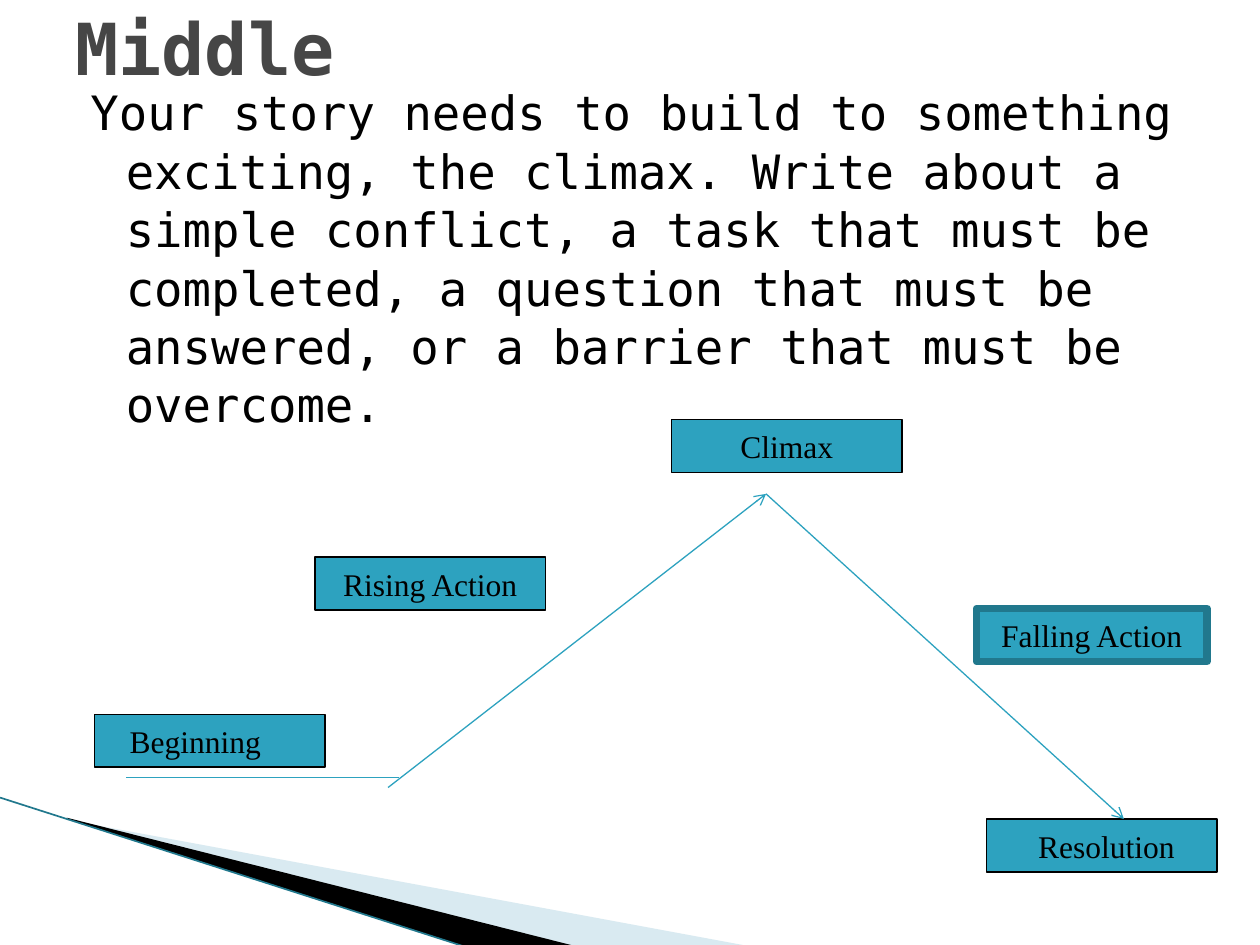
from lxml import etree
from pptx import Presentation
from pptx.dml.color import RGBColor
from pptx.enum import shapes, text
from pptx.oxml.ns import qn
from pptx.util import Inches, Pt

BLACK = RGBColor(0x00, 0x00, 0x00)
GRAY = RGBColor(0x46, 0x46, 0x46)
TEAL = RGBColor(0x2D, 0xA2, 0xBF)
DARK_TEAL = RGBColor(0x21, 0x78, 0x8D)
PALE_BLUE = RGBColor(0xA0, 0xCB, 0xDC)
MONO = "DejaVu Sans Mono"
SERIF = "Times New Roman"
LABEL_WIDTH, LABEL_HEIGHT = 1.83, 0.42


def add_run(paragraph, words, font_name, size, color, bold=False):
    run = paragraph.add_run()
    run.text = words
    run.font.name = font_name
    run.font.size = Pt(size)
    run.font.color.rgb = color
    run.font.bold = bold


def add_line(slide, start, end, color=TEAL, width=0.75, arrow=False):
    points = [Inches(value) for value in (*start, *end)]
    line = slide.shapes.add_connector(shapes.MSO_CONNECTOR.STRAIGHT, *points)
    line.line.color.rgb = color
    line.line.width = Pt(width)
    if arrow:
        etree.SubElement(line.line._get_or_add_ln(), qn("a:tailEnd"), type="arrow")
    etree.SubElement(line._element.spPr, qn("a:effectLst"))


def add_wedge(slide, points, color, opacity=None):
    corners = [(Inches(x), Inches(y)) for x, y in points]
    builder = slide.shapes.build_freeform(*corners[0])
    builder.add_line_segments(corners[1:], close=True)
    wedge = builder.convert_to_shape()
    wedge.shadow.inherit = False
    wedge.fill.solid()
    wedge.fill.fore_color.rgb = color
    wedge.line.fill.background()
    if opacity is not None:
        color_element = wedge._element.spPr.find(f".//{qn('a:srgbClr')}")
        etree.SubElement(color_element, qn("a:alpha"), val=str(opacity * 1000))


def add_corner_decoration(slide, left, top):
    """Draw the wedges that sweep from the left edge to the bottom edge."""
    def place(*points):
        return [(left + x, top + y) for x, y in points]

    add_wedge(slide, place((0.55, 0.18), (5.95, 1.18), (4.56, 1.18), (0.55, 0.17)),
              PALE_BLUE, opacity=40)
    add_wedge(slide, place((0.53, 0.16), (4.57, 1.18), (3.72, 1.19), (0.54, 0.17)), BLACK)
    add_line(slide, *place((0, 0), (3.71, 1.19)), color=DARK_TEAL, width=0.95)


def add_text_frame(slide, left, top, width, height):
    box = slide.shapes.add_textbox(*map(Inches, (left, top, width, height)))
    box.text_frame.word_wrap = True
    return box.text_frame


def add_title(slide, left, top, width, height):
    frame = add_text_frame(slide, left, top, width, height)
    frame.vertical_anchor = text.MSO_ANCHOR.MIDDLE
    add_run(frame.paragraphs[0], "Middle", MONO, 41, GRAY, bold=True)


def add_body(slide, left, top, width, height):
    frame = add_text_frame(slide, left, top, width, height)
    paragraph = frame.paragraphs[0]
    paragraph.line_spacing = 1.03
    properties = paragraph._p.get_or_add_pPr()
    properties.set("marL", str(Inches(0.4)))
    properties.set("indent", str(Inches(-0.28)))
    add_run(paragraph,
            "Your story needs to build to something exciting, the climax. "
            "Write about a simple conflict, a task that must be completed, "
            "a question that must be answered, or a barrier that must be overcome.",
            MONO, 27, BLACK)


def add_label(slide, words, left, top, text_inset=None, border=BLACK, border_width=1):
    """Add a label box; its text is centred unless a left text inset is given."""
    label = slide.shapes.add_shape(
        shapes.MSO_SHAPE.RECTANGLE,
        *map(Inches, (left, top, LABEL_WIDTH, LABEL_HEIGHT)))
    label.shadow.inherit = False
    label.fill.solid()
    label.fill.fore_color.rgb = TEAL
    label.line.color.rgb = border
    label.line.width = Pt(border_width)
    frame = label.text_frame
    frame.word_wrap = False
    frame.vertical_anchor = text.MSO_ANCHOR.MIDDLE
    paragraph = frame.paragraphs[0]
    if text_inset is None:
        paragraph.alignment = text.PP_ALIGN.CENTER
    else:
        paragraph.alignment = text.PP_ALIGN.LEFT
        frame.word_wrap = True
        frame.margin_left = Inches(text_inset)
    add_run(paragraph, words, SERIF, 18, BLACK)


def add_story_arc(slide, left, top):
    add_label(slide, "Beginning", left, top + 2.34, text_inset=0.28)
    add_label(slide, "Rising Action", left + 1.75, top + 1.09)
    add_label(slide, "Climax", left + 4.58, top)
    add_label(slide, "Falling Action", left + 7, top + 1.5,
              border=DARK_TEAL, border_width=4.33)
    add_label(slide, "Resolution", left + 7.08, top + 3.17, text_inset=0.41)

    peak = (left + 5.33, top + 0.59)
    add_line(slide, (left + 0.25, top + 2.84), (left + 2.42, top + 2.84))
    add_line(slide, (left + 2.33, top + 2.92), peak, arrow=True)
    add_line(slide, peak, (left + 8.17, top + 3.17), arrow=True)


def main():
    presentation = Presentation()
    presentation.slide_width = Inches(10)
    presentation.slide_height = Inches(7.5)
    slide = presentation.slides.add_slide(presentation.slide_layouts[6])
    add_corner_decoration(slide, 0, 6.33)
    add_body(slide, 0.5, 0.6, 9, 2.9)
    add_title(slide, 0.5, -0.25, 9, 1.25)
    add_story_arc(slide, 0.75, 3.33)
    presentation.save("out.pptx")


if __name__ == "__main__":
    main()
